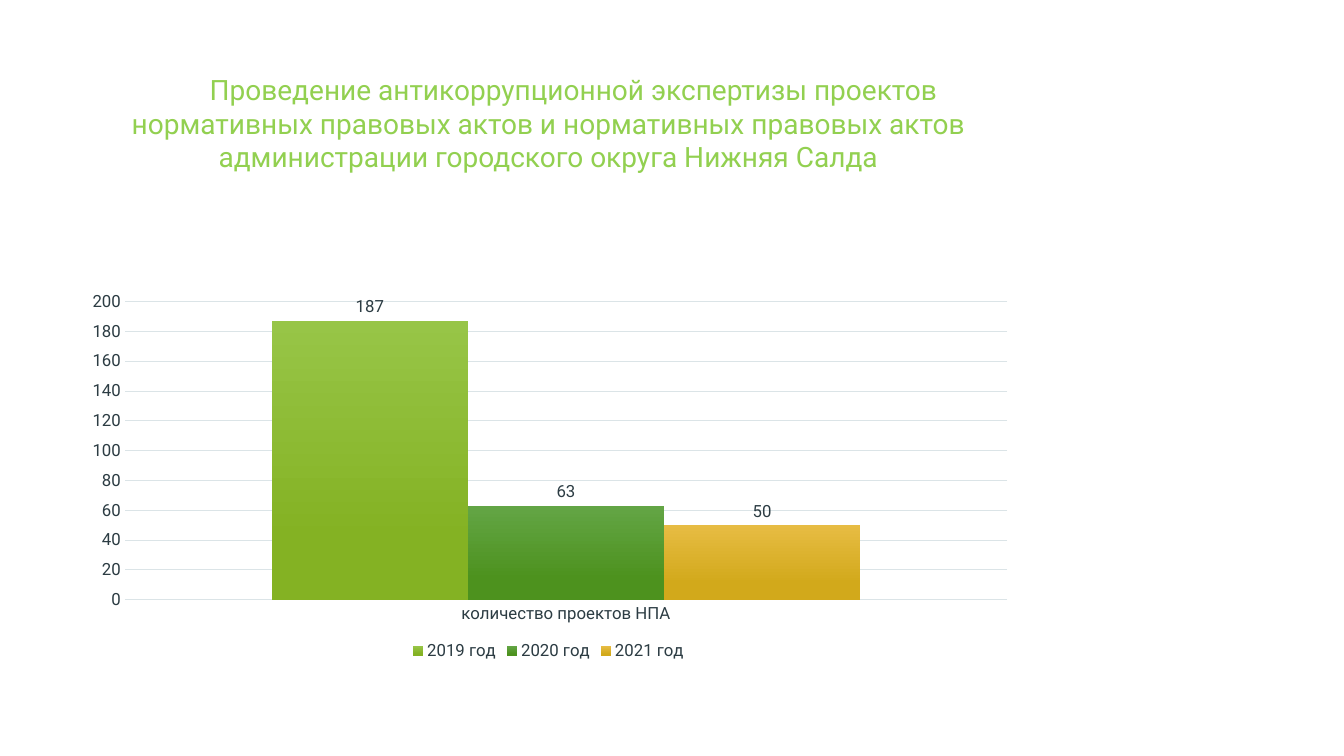
from lxml.etree import SubElement
from pptx import Presentation
from pptx.chart.data import CategoryChartData
from pptx.dml.color import RGBColor
from pptx.enum.chart import XL_CHART_TYPE, XL_LABEL_POSITION, XL_LEGEND_POSITION, XL_TICK_MARK
from pptx.enum.text import MSO_ANCHOR, PP_ALIGN
from pptx.oxml.ns import qn
from pptx.util import Inches, Pt

FONT = "Roboto"
TITLE = (
    "\tПроведение антикоррупционной экспертизы проектов нормативных правовых "
    "актов и нормативных правовых актов администрации городского округа Нижняя Салда"
)
CATEGORY = "количество проектов НПА"
YEARS = [
    ("2019 год", 187, "97C547", "84B223"),
    ("2020 год", 63, "63A545", "4D921E"),
    ("2021 год", 50, "E7BC43", "D2A91B"),
]
TEXT_COLOR = "2C3C43"
LINE_COLOR = "DBE4E7"
LEFT, WIDTH = 0.74, 9.4
TITLE_BOX = [Inches(length) for length in (LEFT, 0.67, WIDTH, 1.44)]
CHART_BOX = [Inches(length) for length in (LEFT, 2.36, WIDTH, 4.24)]
PLOT_SHARES = {"x": 0.053, "y": 0.149, "w": 0.931, "h": 0.698}


def color(value):
    return RGBColor.from_string(value)


def format_font(font, size, value):
    font.name = FONT
    font.size = Pt(size)
    font.bold = False
    font.color.rgb = color(value)


def format_line(line):
    line.color.rgb = color(LINE_COLOR)
    line.width = Pt(0.75)


def add_title(slide, box):
    title = slide.shapes.title
    title.left, title.top, title.width, title.height = box
    title.text_frame.text = TITLE
    title.text_frame.vertical_anchor = MSO_ANCHOR.TOP
    paragraph = title.text_frame.paragraphs[0]
    paragraph.alignment = PP_ALIGN.CENTER
    format_font(paragraph.font, 20, "92D050")


def set_plot_layout(chart):
    plot_area = chart.plots[0]._element.getparent()
    layout = plot_area.find(qn("c:layout"))
    if layout is None:
        layout = SubElement(plot_area, qn("c:layout"))
        plot_area.insert(0, layout)
    manual = SubElement(layout, qn("c:manualLayout"))
    settings = {"layoutTarget": "inner", "xMode": "edge", "yMode": "edge", **PLOT_SHARES}
    for name, value in settings.items():
        SubElement(manual, qn(f"c:{name}")).set("val", str(value))


def format_axes(chart):
    for axis in (chart.category_axis, chart.value_axis):
        axis.major_tick_mark = axis.minor_tick_mark = XL_TICK_MARK.NONE
        format_font(axis.tick_labels.font, 12, TEXT_COLOR)
    format_line(chart.category_axis.format.line)
    values = chart.value_axis
    values.minimum_scale, values.maximum_scale, values.major_unit = 0, 200, 20
    values.format.line.fill.background()
    format_line(values.major_gridlines.format.line)


def format_series(series, top_color, bottom_color):
    fill = series.format.fill
    fill.gradient()
    fill.gradient_angle = 270
    for stop, position, value in zip(fill.gradient_stops, (0, 0.78), (top_color, bottom_color)):
        stop.position = position
        stop.color.rgb = color(value)
    series.format.line.fill.background()
    labels = series.data_labels
    labels.show_value = True
    labels.position = XL_LABEL_POSITION.OUTSIDE_END
    format_font(labels.font, 12, TEXT_COLOR)


def add_project_chart(slide, box):
    data = CategoryChartData()
    data.categories = [CATEGORY]
    for year, count, _, _ in YEARS:
        data.add_series(year, [count])
    chart = slide.shapes.add_chart(XL_CHART_TYPE.COLUMN_CLUSTERED, *box, data).chart
    format_font(chart.font, 10, "000000")
    chart.has_title = False
    chart.has_legend = True
    chart.legend.position = XL_LEGEND_POSITION.BOTTOM
    chart.legend.include_in_layout = False
    format_font(chart.legend.font, 12, TEXT_COLOR)
    plot = chart.plots[0]
    plot.gap_width, plot.overlap, plot.vary_by_categories = 150, 0, False
    for series, (_, _, top_color, bottom_color) in zip(plot.series, YEARS):
        format_series(series, top_color, bottom_color)
    format_axes(chart)
    set_plot_layout(chart)


def main():
    presentation = Presentation()
    presentation.slide_width, presentation.slide_height = Inches(13.33), Inches(7.5)
    slide = presentation.slides.add_slide(presentation.slide_layouts[5])
    add_title(slide, TITLE_BOX)
    add_project_chart(slide, CHART_BOX)
    presentation.save("out.pptx")


if __name__ == "__main__":
    main()
